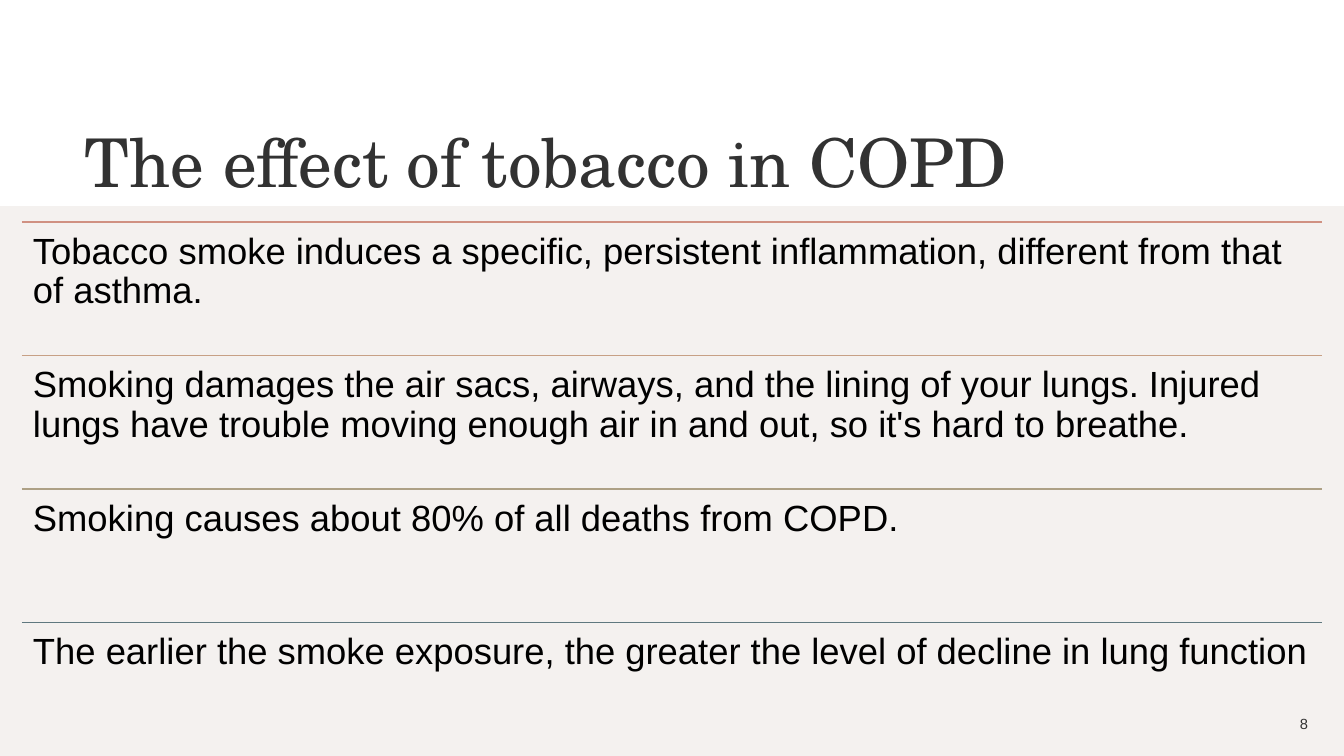
"""Build the slide on the effect of tobacco in COPD."""
from dataclasses import dataclass

from pptx import Presentation, util as u
from pptx.dml.color import RGBColor
from pptx.enum import shapes, text
from pptx.oxml import xmlchemy as xml

TITLE = "The effect of tobacco in COPD"
FACTS = [
    ("Tobacco smoke induces a specific, persistent inflammation, different from that of asthma.", "D09182"),
    ("Smoking damages the air sacs, airways, and the lining of your lungs. Injured lungs have trouble "
     "moving enough air in and out, so it's hard to breathe.", "C7A085"),
    ("Smoking causes about 80% of all deaths from COPD.", "ADA085"),
    ("The earlier the smoke exposure, the greater the level of decline in lung function", "5F787F"),
]
PAGE = "8"


@dataclass(frozen=True)
class Theme:
    head: str = "TeX Gyre Schola"
    body: str = "Arial"
    dark: str = "323232"
    ink: str = "000000"
    band: str = "F4F1EF"
    big: int = 48
    mid: int = 26
    small: float = 10.5


LOOK = Theme()
WIDE, HIGH = 1344, 756
TITLE_BOX = (31, 106, 1030, 110)
PAGE_BOX = (1263, 704, 55, 40)
BAND_TOP = 206
LEFT, TOP, SPAN, DEPTH = 22, 222, 1300, 534
PAD = 11


def px(num):
    return u.Emu(round(num * 914400 / 100.8))


def rgb(code):
    return RGBColor.from_string(code)


def write(shape, words, face, size, color, align, anchor, pad):
    frame = shape.text_frame
    frame.word_wrap = True
    frame.auto_size = text.MSO_AUTO_SIZE.NONE
    frame.vertical_anchor = anchor
    frame.margin_left = frame.margin_right = px(pad)
    frame.margin_top = frame.margin_bottom = px(pad)
    para = frame.paragraphs[0]
    para.text = words
    para.alignment = align
    para.font.name = face
    para.font.size = u.Pt(size)
    para.font.color.rgb = rgb(color)
    return para


def add_band(slide):
    band = slide.shapes.add_shape(shapes.MSO_SHAPE.RECTANGLE, 0, px(BAND_TOP), px(WIDE), px(HIGH - BAND_TOP))
    band.shadow.inherit = False
    band.fill.solid()
    band.fill.fore_color.rgb = rgb(LOOK.band)
    band.line.fill.background()


def add_title(slide):
    title = slide.shapes.title
    title.left, title.top, title.width, title.height = map(px, TITLE_BOX)
    write(title, TITLE, LOOK.head, LOOK.big, LOOK.dark, text.PP_ALIGN.CENTER, text.MSO_ANCHOR.MIDDLE, 5)


def add_facts(slide):
    step = DEPTH / len(FACTS)
    for row, (words, color) in enumerate(FACTS):
        top = TOP + row * step
        rule = slide.shapes.add_connector(
            shapes.MSO_CONNECTOR.STRAIGHT, px(LEFT), px(top), px(LEFT + SPAN), px(top))
        rule.line.color.rgb = rgb(color)
        rule.line.width = u.Pt(1)
        rule.element.spPr.append(xml.OxmlElement("a:effectLst"))
        box = slide.shapes.add_textbox(px(LEFT), px(top), px(SPAN), px(step))
        para = write(box, words, LOOK.body, LOOK.mid, LOOK.ink, text.PP_ALIGN.LEFT, text.MSO_ANCHOR.TOP, PAD)
        para.line_spacing = 0.9


def add_page(slide):
    box = slide.shapes.add_textbox(*map(px, PAGE_BOX))
    write(box, PAGE, LOOK.body, LOOK.small, LOOK.dark, text.PP_ALIGN.RIGHT, text.MSO_ANCHOR.MIDDLE, 10)


def main():
    deck = Presentation()
    deck.slide_width, deck.slide_height = px(WIDE), px(HIGH)
    slide = deck.slides.add_slide(deck.slide_layouts[5])
    add_title(slide)
    add_band(slide)
    add_facts(slide)
    add_page(slide)
    deck.save("out.pptx")


if __name__ == "__main__":
    main()
